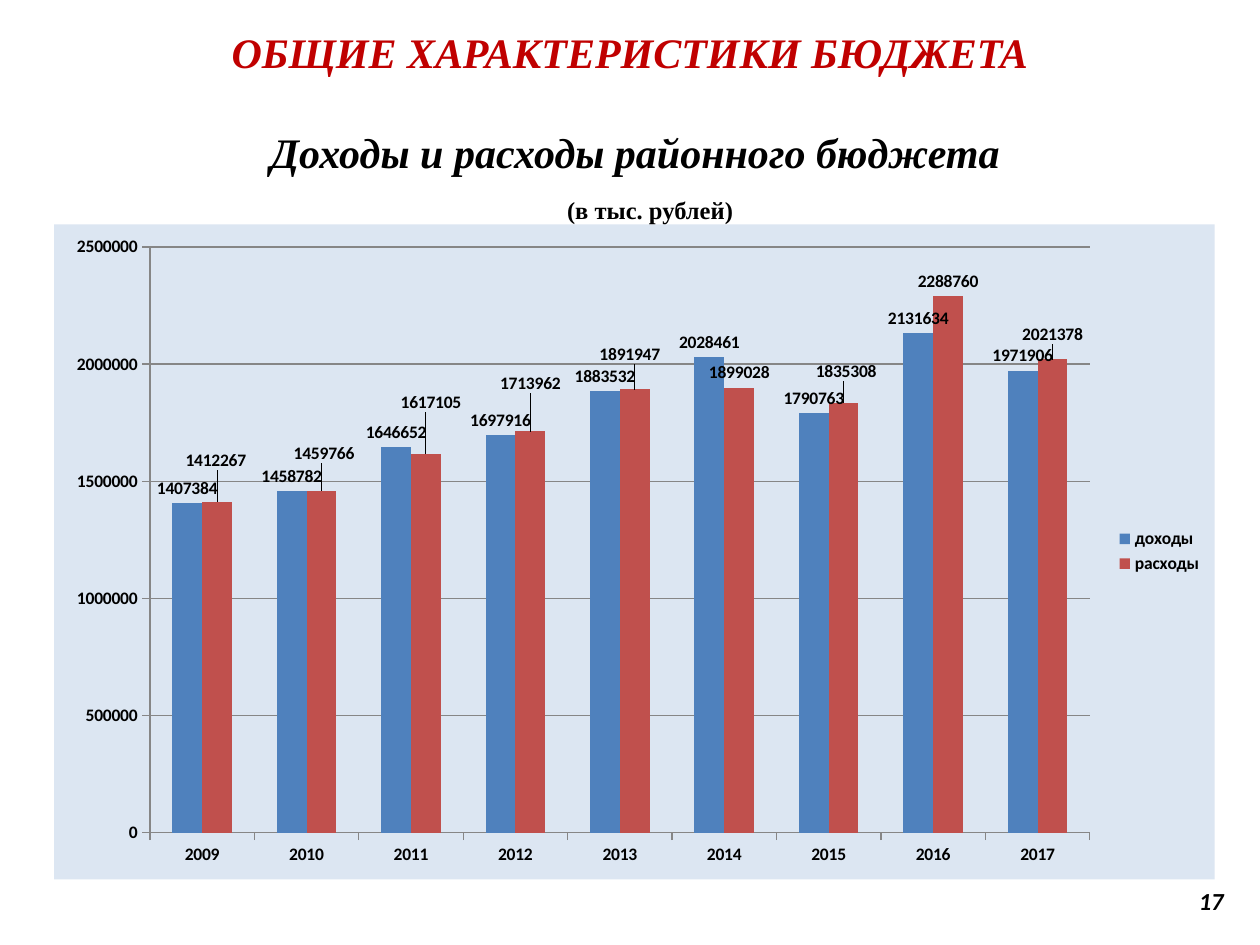
import dataclasses
import typing

import pptx
import pptx.chart.data
import pptx.dml.color
import pptx.enum.chart
import pptx.enum.text
import pptx.oxml
import pptx.oxml.ns
import pptx.util

Inches = pptx.util.Inches
Pt = pptx.util.Pt
Align = pptx.enum.text.PP_ALIGN
Anchor = pptx.enum.text.MSO_ANCHOR
Kinds = pptx.enum.chart


@dataclasses.dataclass(frozen=True)
class Theme:
    red: str = "C00000"
    ink: str = "000000"
    panel: str = "DCE6F2"
    grid: str = "868686"
    serif: str = "Times New Roman"
    sans: str = "Calibri"
    head: int = 24
    note: int = 14
    small: int = 10


class Series(typing.NamedTuple):
    name: str
    color: str
    values: tuple
    shifts: dict  # point index -> label shift (x, y) in inches


class Line(typing.NamedTuple):
    text: str
    color: str
    size: int
    italic: bool
    before: float
    indent: float


THEME = Theme()
WIDTH, HEIGHT = 9.21, 5.2  # chart size in inches
YEARS = [str(year) for year in range(2009, 2018)]
SERIES = [
    Series("доходы", "4F81BD",
           (1407384, 1458782, 1646652, 1697916, 1883532,
            2028461, 1790763, 2131634, 1971906), {}),
    Series("расходы", "C0504D",
           (1412267, 1459766, 1617105, 1713962, 1891947,
            1899028, 1835308, 2288760, 2021378),
           {0: (-0.01, -0.21), 1: (0.02, -0.18), 2: (0.04, -0.29), 3: (0, -0.26),
            4: (-0.04, -0.16), 6: (0.02, -0.13), 8: (0, -0.08)}),
]
LINES = [
    Line("ОБЩИЕ ХАРАКТЕРИСТИКИ БЮДЖЕТА", THEME.red, THEME.head, True, 0, 0),
    Line("Доходы и расходы районного бюджета", THEME.ink, THEME.head, True, 28, 0.08),
    Line("(в тыс. рублей)", THEME.ink, THEME.note, False, 10.5, 0.32),
]


def rgb(code: str):
    return pptx.dml.color.RGBColor.from_string(code)


def style(font, face: str, size: int, color: str, italic: bool = False) -> None:
    font.name, font.size = face, Pt(size)
    font.bold, font.italic = True, italic
    font.color.rgb = rgb(color)


def write(para, text: str, *, face: str, size: int, color: str, italic: bool,
          align=Align.CENTER, before: float = 0, indent: float = 0) -> None:
    para.alignment = align
    if before:
        para.space_before = Pt(before)
    if indent:
        para._p.get_or_add_pPr().set("marL", str(Inches(indent)))
    run = para.add_run()
    run.text = text
    style(run.font, face, size, color, italic)


def add_box(slide, left: float, top: float, width: float, height: float, anchor):
    box = slide.shapes.add_textbox(Inches(left), Inches(top), Inches(width), Inches(height))
    frame = box.text_frame
    frame.word_wrap = True
    frame.vertical_anchor = anchor
    return frame


def place(parent, index: int, x: float, y: float, size: tuple = (), edge: bool = True) -> None:
    """Give a chart part a manual layout, in inches; without edge, a shift."""
    for old in parent.findall(pptx.oxml.ns.qn("c:layout")):
        parent.remove(old)
    inner = '<c:layoutTarget val="inner"/>' if size else ""
    modes = '<c:xMode val="edge"/><c:yMode val="edge"/>' if edge else ""
    parts = zip("xywh", (x, y, *size), (WIDTH, HEIGHT) * 2)
    marks = "".join(f'<c:{key} val="{val / full:.5f}"/>' for key, val, full in parts)
    parent.insert(index, pptx.oxml.parse_xml(
        f'<c:layout {pptx.oxml.ns.nsdecls("c")}><c:manualLayout>'
        f"{inner}{modes}{marks}</c:manualLayout></c:layout>"))


def drop_leaders(labels) -> None:
    """Turn off the lines between moved labels and their columns."""
    root = labels._element
    for old in root.findall(pptx.oxml.ns.qn("c:showLeaderLines")):
        root.remove(old)
    root.append(pptx.oxml.parse_xml(
        f'<c:extLst {pptx.oxml.ns.nsdecls("c")}>'
        '<c:ext uri="{CE6537A1-D6FC-4f65-9D91-7224C49458BB}" '
        'xmlns:c15="http://schemas.microsoft.com/office/drawing/2012/chart">'
        '<c15:showLeaderLines val="0"/></c:ext></c:extLst>'))


def draw_series(series, row: Series) -> None:
    series.format.fill.solid()
    series.format.fill.fore_color.rgb = rgb(row.color)
    series.invert_if_negative = False
    labels = series.data_labels
    labels.show_value = True
    labels.position = Kinds.XL_LABEL_POSITION.OUTSIDE_END
    style(labels.font, THEME.sans, THEME.small, THEME.ink)
    for index, (x, y) in row.shifts.items():
        label = series.points[index].data_label
        style(label.font, THEME.sans, THEME.small, THEME.ink)
        label.position = Kinds.XL_LABEL_POSITION.OUTSIDE_END
        place(label._get_or_add_dLbl(), 1, x, y, edge=False)
    drop_leaders(labels)


def draw_chart(slide) -> None:
    data = pptx.chart.data.CategoryChartData(number_format="General")
    data.categories = YEARS
    for row in SERIES:
        data.add_series(row.name, row.values)
    chart = slide.shapes.add_chart(
        Kinds.XL_CHART_TYPE.COLUMN_CLUSTERED,
        Inches(0.43), Inches(1.78), Inches(WIDTH), Inches(HEIGHT), data).chart
    style(chart.font, THEME.sans, THEME.small, THEME.ink)
    chart.has_title = False

    # Panel behind the chart
    root = chart._chartSpace
    root.chart.addnext(pptx.oxml.parse_xml(
        f'<c:spPr {pptx.oxml.ns.nsdecls("c", "a")}><a:solidFill>'
        f'<a:srgbClr val="{THEME.panel}"/></a:solidFill><a:ln><a:noFill/></a:ln></c:spPr>'))

    # Columns and labels
    plot = chart.plots[0]
    plot.gap_width, plot.overlap = 150, 0
    plot.vary_by_categories = False
    for series, row in zip(plot.series, SERIES):
        draw_series(series, row)

    # Axes
    values = chart.value_axis
    values.minimum_scale, values.maximum_scale = 0, 2500000
    values.major_unit = 500000
    values.has_major_gridlines = True
    for part in (values, chart.category_axis, values.major_gridlines):
        part.format.line.color.rgb = rgb(THEME.grid)
        part.format.line.width = Pt(0.75)
    for axis in (values, chart.category_axis):
        axis.major_tick_mark = Kinds.XL_TICK_MARK.OUTSIDE
        axis.minor_tick_mark = Kinds.XL_TICK_MARK.NONE

    # Legend and plot area
    chart.has_legend = True
    chart.legend.position = Kinds.XL_LEGEND_POSITION.RIGHT
    chart.legend.include_in_layout = False
    place(chart.legend._element, 1, 8.41, 2.38)
    place(root.chart.plotArea, 0, 0.76, 0.18, size=(7.46, 4.65))


def main() -> None:
    deck = pptx.Presentation()
    deck.slide_width, deck.slide_height = Inches(10), Inches(7.5)
    slide = deck.slides.add_slide(deck.slide_layouts[6])
    draw_chart(slide)

    # Page number
    page = add_box(slide, 7.17, 6.95, 2.64, 0.4, Anchor.MIDDLE)
    write(page.paragraphs[0], "17", face=THEME.sans, size=THEME.note,
          color=THEME.ink, italic=True, align=Align.RIGHT)

    # Headings, above the chart panel
    head = add_box(slide, 0, -0.32, 10, 2.19, Anchor.BOTTOM)
    head.margin_bottom = Inches(0.09)
    for index, line in enumerate(LINES):
        para = head.add_paragraph() if index else head.paragraphs[0]
        write(para, face=THEME.serif, **line._asdict())

    deck.save("out.pptx")


if __name__ == "__main__":
    main()
